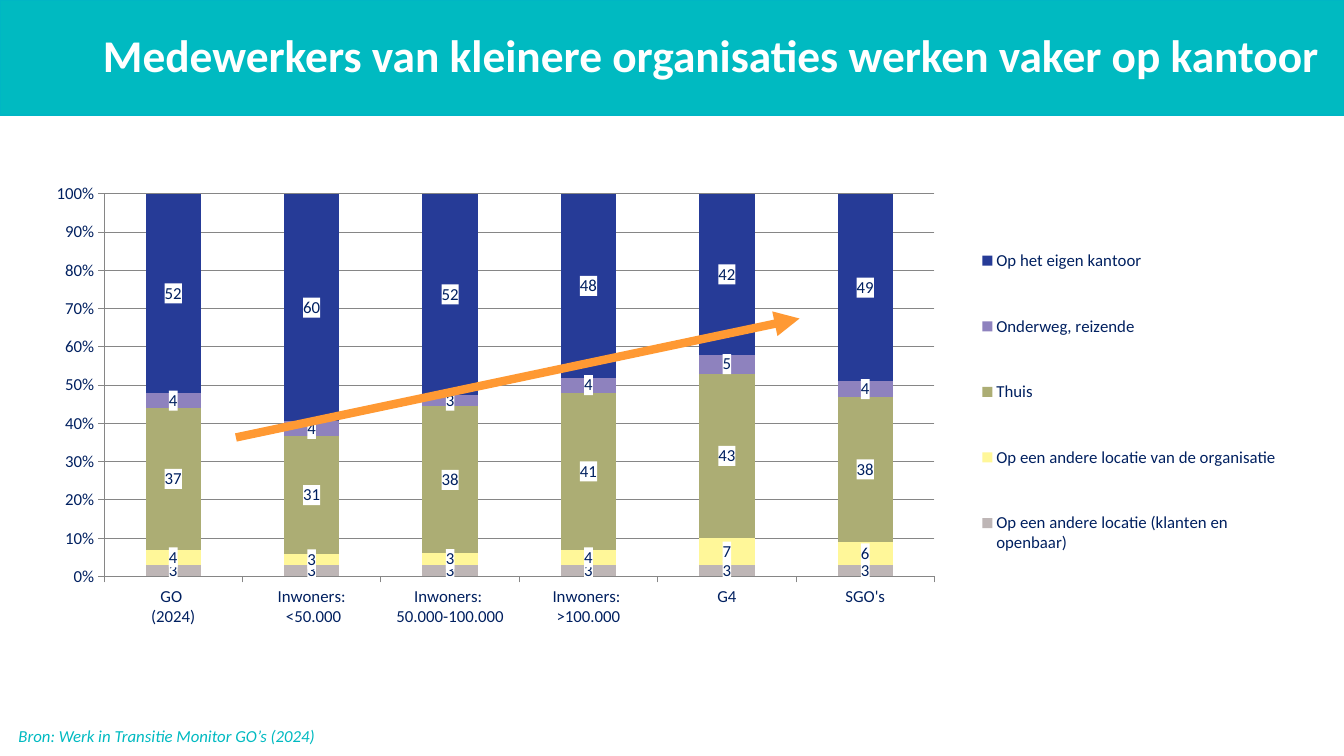
from dataclasses import dataclass

from lxml import etree
from pptx import Presentation
from pptx.chart.data import CategoryChartData
from pptx.dml.color import RGBColor
from pptx.enum.chart import XL_CHART_TYPE, XL_LABEL_POSITION, XL_LEGEND_POSITION, XL_TICK_MARK
from pptx.enum.shapes import MSO_CONNECTOR, MSO_SHAPE
from pptx.enum.text import MSO_ANCHOR, MSO_AUTO_SIZE, PP_ALIGN
from pptx.oxml import parse_xml
from pptx.oxml.ns import nsdecls, qn
from pptx.util import Inches, Pt

STACKED_100 = XL_CHART_TYPE.COLUMN_STACKED_100
CENTER_LABEL = XL_LABEL_POSITION.CENTER
LEGEND_RIGHT = XL_LEGEND_POSITION.RIGHT
TICK_OUT = XL_TICK_MARK.OUTSIDE
RECTANGLE = MSO_SHAPE.RECTANGLE
STRAIGHT = MSO_CONNECTOR.STRAIGHT
MIDDLE = MSO_ANCHOR.MIDDLE
NO_FIT = MSO_AUTO_SIZE.NONE
LEFT, CENTER = PP_ALIGN.LEFT, PP_ALIGN.CENTER


@dataclass(frozen=True)
class Theme:
    font: str = "Calibri"
    band: str = "00BAC1"
    band_line: str = "00B6C4"
    white: str = "FFFFFF"
    ink: str = "002060"
    grid: str = "868686"
    trend: str = "FF9933"
    title_size: float = 32.4
    text_size: float = 12


THEME = Theme()

CATEGORIES = ["GO \n(2024)", "Inwoners:\n <50.000", "Inwoners: \n50.000-100.000",
              "Inwoners: \n>100.000", "G4", "SGO's"]
SERIES = [
    ("Op een andere locatie (klanten en openbaar)", "BEB6B6", (3, 3, 3, 3, 3, 3)),
    ("Op een andere locatie van de organisatie", "FFF799", (4, 3, 3, 4, 7, 6)),
    ("Thuis", "ACAD74", (37, 31, 38, 41, 43, 38)),
    ("Onderweg, reizende", "8E82BE", (4, 4, 3, 4, 5, 4)),
    ("Op het eigen kantoor", "263B97", (52, 60, 52, 48, 42, 49)),
]


def rgb(color):
    return RGBColor.from_string(color)


def write(tf, text, size, color, bold=False, italic=False, align=LEFT, hanging=0):
    tf.word_wrap = True
    tf.auto_size = NO_FIT
    p = tf.paragraphs[0]
    p.alignment = align
    p.line_spacing = 0.9
    p.space_before = Pt(0)
    if hanging:
        pPr = p._p.get_or_add_pPr()
        pPr.set("marL", str(Inches(hanging)))
        pPr.set("indent", str(-Inches(hanging)))
    r = p.add_run()
    r.text = text
    r.font.name = THEME.font
    r.font.size = Pt(size)
    r.font.bold = bold
    r.font.italic = italic
    r.font.color.rgb = rgb(color)


def add_header(s, x, y, w, h):
    band = s.shapes.add_shape(RECTANGLE, Inches(x), Inches(y), Inches(w), Inches(h))
    band.shadow.inherit = False
    band.fill.solid()
    band.fill.fore_color.rgb = rgb(THEME.band)
    band.line.color.rgb = rgb(THEME.band_line)
    band.line.width = Pt(1)
    s.shapes._spTree.insert(2, band._element)

    indent = 0.92
    title = s.shapes.title
    title.left, title.top = Inches(x + indent), Inches(y)
    title.width, title.height = Inches(w - indent), Inches(h)
    title.text_frame.vertical_anchor = MIDDLE
    write(title.text_frame, "Medewerkers van kleinere organisaties werken vaker op kantoor",
          THEME.title_size, THEME.white, bold=True, hanging=0.39)


def manual_layout(x, y, w, h, inner=False):
    target = '<c:layoutTarget val="inner"/>' if inner else ""
    return parse_xml(
        f'<c:layout {nsdecls("c")}><c:manualLayout>{target}'
        '<c:xMode val="edge"/><c:yMode val="edge"/>'
        f'<c:x val="{x}"/><c:y val="{y}"/><c:w val="{w}"/><c:h val="{h}"/>'
        '</c:manualLayout></c:layout>')


def set_layout(parent, layout, index):
    for old in parent.findall(qn("c:layout")):
        parent.remove(old)
    parent.insert(index, layout)


def format_series(series, color):
    series.format.fill.solid()
    series.format.fill.fore_color.rgb = rgb(color)
    labels = series.data_labels
    labels.show_value = True
    labels.number_format = "0"
    labels.number_format_is_linked = False
    labels.position = CENTER_LABEL
    labels.font.size = Pt(THEME.text_size)
    labels.font.color.rgb = rgb(THEME.ink)
    labels._element.find(qn("c:numFmt")).addnext(parse_xml(
        f'<c:spPr {nsdecls("c", "a")}><a:solidFill><a:srgbClr val="{THEME.white}"/>'
        '</a:solidFill></c:spPr>'))


def add_workplace_chart(s, x, y, w, h):
    data = CategoryChartData()
    data.categories = CATEGORIES
    for name, _, values in SERIES:
        data.add_series(name, values)
    chart = s.shapes.add_chart(STACKED_100, Inches(x), Inches(y), Inches(w), Inches(h), data).chart
    chart.has_title = False
    chart.font.name = THEME.font
    chart.font.size = Pt(THEME.text_size)
    chart.font.color.rgb = rgb(THEME.ink)

    plot = chart.plots[0]
    plot.gap_width = 150
    plot.overlap = 100
    plot.vary_by_categories = False
    for series, (_, color, _) in zip(plot.series, SERIES):
        format_series(series, color)

    for axis in (chart.category_axis, chart.value_axis):
        axis.major_tick_mark = TICK_OUT
        axis.format.line.color.rgb = rgb(THEME.grid)
    value_axis = chart.value_axis
    value_axis.minimum_scale, value_axis.maximum_scale, value_axis.major_unit = 0, 1, 0.1
    value_axis.tick_labels.number_format = "0%"
    value_axis.tick_labels.number_format_is_linked = False
    value_axis.has_major_gridlines = True
    value_axis.major_gridlines.format.line.color.rgb = rgb(THEME.grid)

    chart.has_legend = True
    chart.legend.position = LEGEND_RIGHT
    chart.legend.include_in_layout = False
    plot_area = chart._chartSpace.chart.plotArea
    set_layout(plot_area, manual_layout(0.06, 0.13, 0.64, 0.69, inner=True), 0)
    set_layout(chart.legend._element, manual_layout(0.73, 0.15, 0.24, 0.71), 1)


def add_trend_arrow(s, x, y, w, h):
    arrow = s.shapes.add_connector(STRAIGHT, Inches(x), Inches(y + h), Inches(x + w), Inches(y))
    arrow.line.color.rgb = rgb(THEME.trend)
    arrow.line.width = Pt(6)
    etree.SubElement(arrow.line._get_or_add_ln(), qn("a:tailEnd"), type="triangle")
    etree.SubElement(arrow._element.spPr, qn("a:effectLst"))


def add_source(s, x, y, w, h):
    tb = s.shapes.add_textbox(Inches(x), Inches(y), Inches(w), Inches(h))
    write(tb.text_frame, "Bron: Werk in Transitie Monitor GO’s (2024)",
          THEME.text_size, THEME.band, italic=True, align=CENTER)


def main():
    prs = Presentation()
    prs.slide_width, prs.slide_height = Inches(13.33), Inches(7.5)
    s = prs.slides.add_slide(prs.slide_layouts[5])
    add_header(s, 0, 0, 13.33, 1.14)
    add_workplace_chart(s, 0.26, 1.21, 12.87, 5.5)
    add_trend_arrow(s, 2.34, 3.16, 5.59, 1.18)
    add_source(s, 0, 7.17, 3.31, 0.33)
    prs.save("out.pptx")


if __name__ == "__main__":
    main()
